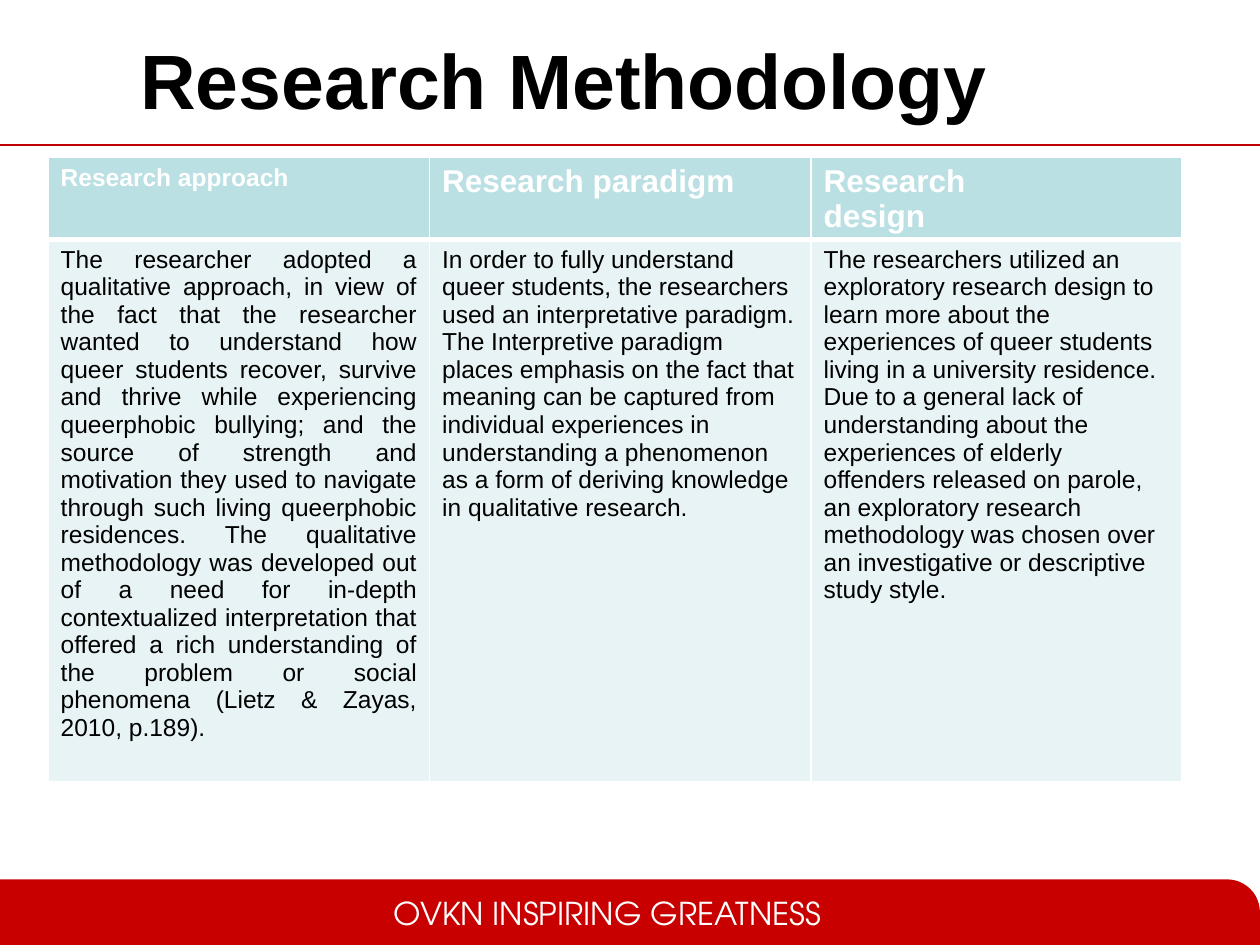
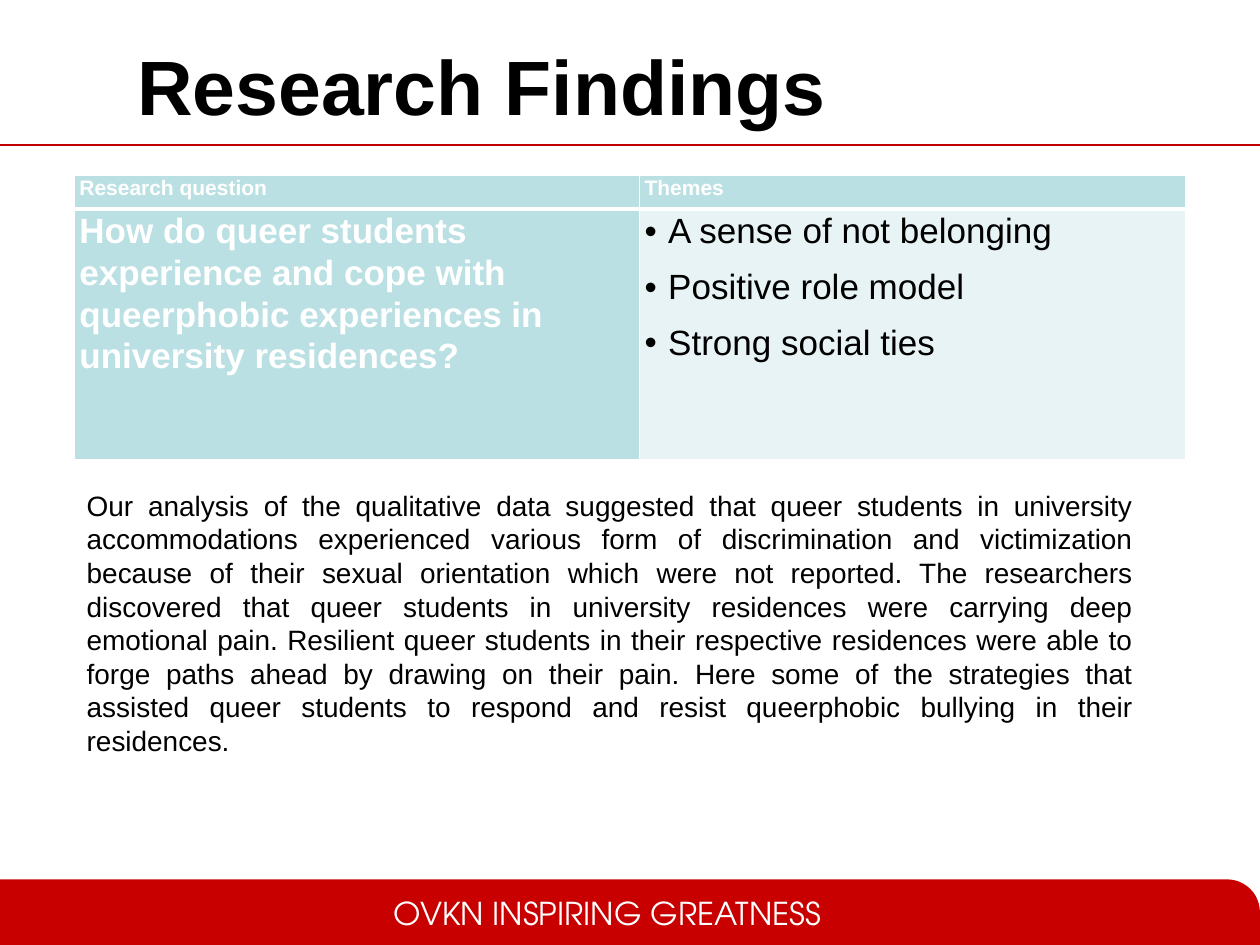
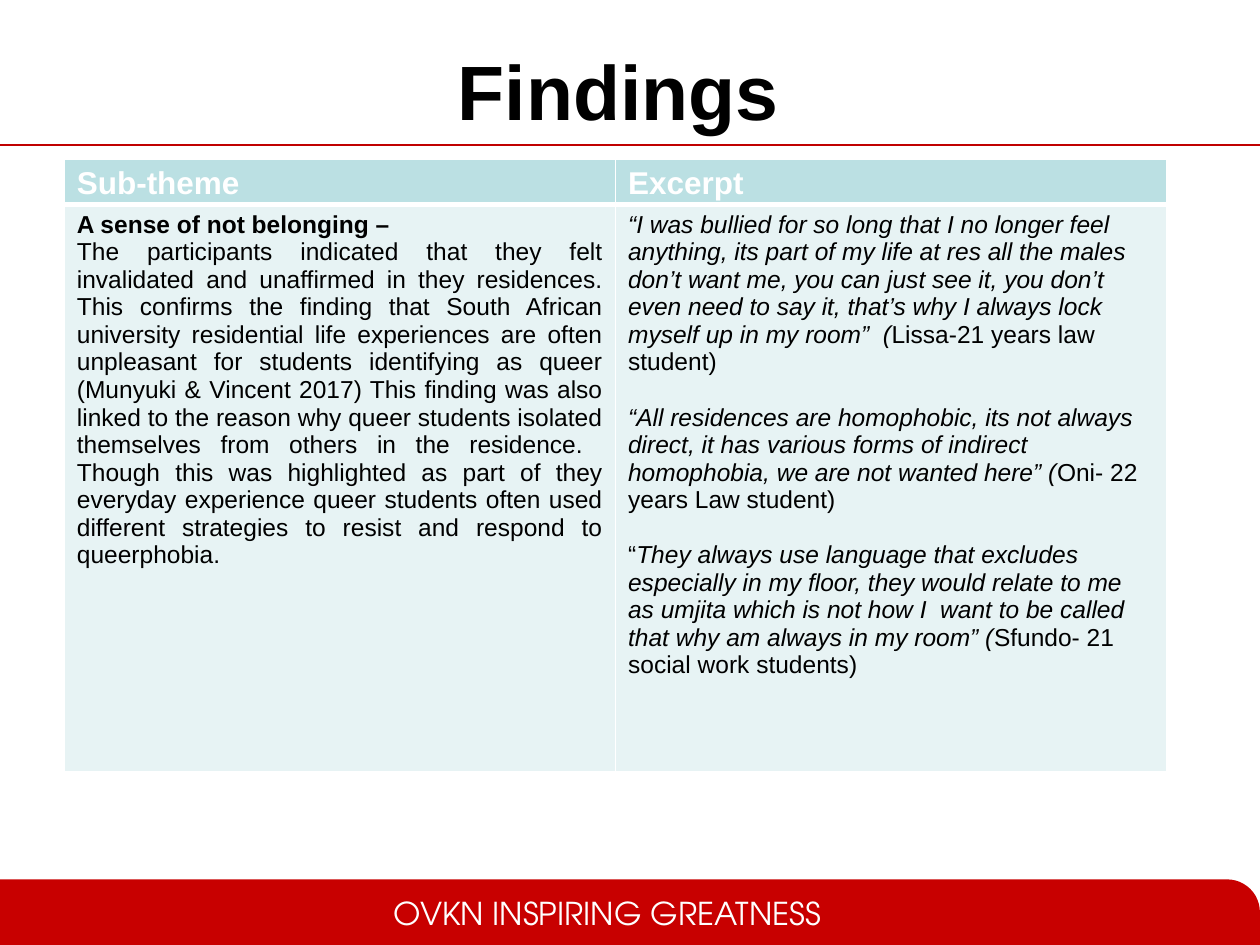
from lxml import etree
from pptx import Presentation
from pptx.dml.color import RGBColor
from pptx.enum import shapes, text
from pptx.oxml.ns import qn
from pptx.util import Pt

FONT, FOOT_FONT = "Arial", "TeX Gyre Adventor"
RULE, BAND = "C00000", "C80000"
HEAD, BODY = "BBE0E3", "E7F3F4"
WHITE, BLACK = "FFFFFF", "000000"
WIDTH, HEIGHT = 720, 540
LEFT, MID, JUST = text.PP_ALIGN.LEFT, text.PP_ALIGN.CENTER, text.PP_ALIGN.JUSTIFY


def rgb(code):
    return RGBColor.from_string(code)


def style(run, size, color=BLACK, bold=False, italic=False, face=FONT):
    font = run.font
    font.size, font.name = Pt(size), face
    font.bold, font.italic = bold, italic
    font.color.rgb = rgb(color)


def write(frame, lines, size, align=LEFT, **look):
    """Fill a text frame with one paragraph per line and return them."""
    frame.text = "\n".join(lines)
    for para in frame.paragraphs:
        para.alignment = align
        for run in para.runs:
            style(run, size, **look)
    return frame.paragraphs


def add_text(slide, box, words, size, align=LEFT, **look):
    frame = slide.shapes.add_textbox(*map(Pt, box)).text_frame
    frame.word_wrap = True
    write(frame, [words], size, align, **look)
    return frame


def add_rule(slide):
    top = Pt(82.75)
    line = slide.shapes.add_connector(
        shapes.MSO_CONNECTOR.STRAIGHT, 0, top, Pt(WIDTH), top)
    line.line.width = Pt(1)
    line.line.color.rgb = rgb(RULE)
    etree.SubElement(line._element.spPr, qn("a:effectLst"))


def add_band(slide):
    top = 502.5
    band = slide.shapes.add_shape(
        shapes.MSO_SHAPE.ROUND_1_RECTANGLE, 0, Pt(top), Pt(WIDTH), Pt(HEIGHT - top))
    band.adjustments[0] = 0.5
    band.shadow.inherit = False
    band.fill.solid()
    band.fill.fore_color.rgb = rgb(BAND)
    band.line.fill.background()
    add_text(slide, (218, 507.5, 300, 29), "OVKN INSPIRING GREATNESS", 18,
             color=WHITE, face=FOOT_FONT)


def add_page(deck, title, left, top):
    """Add a slide with the shared rule, band and title style."""
    slide = deck.slides.add_slide(deck.slide_layouts[6])
    add_rule(slide)
    add_band(slide)
    frame = add_text(slide, (left, top, 648, 90), title, 44, MID, bold=True)
    frame.vertical_anchor = text.MSO_ANCHOR.MIDDLE
    return slide


def edge(cell, side, width):
    line = etree.SubElement(cell._tc.get_or_add_tcPr(), qn("a:ln" + side),
                            w=str(Pt(width)))
    fill = etree.SubElement(line, qn("a:solidFill"))
    etree.SubElement(fill, qn("a:srgbClr"), val=WHITE)


def add_grid(slide, left, top, cols, rows):
    """Add a table with a dark header row over a pale body row."""
    table = slide.shapes.add_table(
        len(rows), len(cols), Pt(left), Pt(top), Pt(sum(cols)), Pt(sum(rows))).table
    table.first_row = table.horz_banding = False
    for col, width in zip(table.columns, cols):
        col.width = Pt(width)
    for r, height in enumerate(rows):
        table.rows[r].height = Pt(height)
        for cell in table.rows[r].cells:
            for side, width in zip("LRTB", (1, 1, 3 if r else 1, 1 if r else 3)):
                edge(cell, side, width)
            paint(cell, BODY if r else HEAD)
    return table


def paint(cell, color):
    cell.fill.solid()
    cell.fill.fore_color.rgb = rgb(color)


def add_heads(table, heads, sizes):
    for cell, words, size in zip(table.rows[0].cells, heads, sizes):
        cell.margin_bottom = 0
        write(cell.text_frame, words.split("\n"), size, color=WHITE, bold=True)


def bullet(para, indent):
    props = para._p.get_or_add_pPr()
    props.set("marL", str(Pt(indent)))
    props.set("indent", str(-Pt(indent)))
    etree.SubElement(props, qn("a:buFont"), typeface=FONT)
    etree.SubElement(props, qn("a:buChar"), char="•")


def add_quote(para, parts, size):
    """Write (words, italic) parts as runs of one paragraph."""
    for words, italic in parts:
        run = para.add_run()
        run.text = words
        style(run, size, italic=italic)


def draw_method(deck):
    slide = add_page(deck, "Research Methodology", -1.5, 0)
    table = add_grid(slide, 27.5, 90, (218, 218, 212), (47, 303))
    add_heads(table, ("Research approach", "Research paradigm", "Research\ndesign"),
              (14, 18, 18))
    notes = (
        "The researcher adopted a qualitative approach, in view of the fact that the "
        "researcher wanted to understand how queer students recover, survive and thrive "
        "while experiencing queerphobic bullying; and the source of strength and "
        "motivation they used to navigate through such living queerphobic residences. "
        "The qualitative methodology was developed out of a need for in-depth "
        "contextualized interpretation that offered a rich understanding of the problem "
        "or social phenomena (Lietz & Zayas, 2010, p.189).",
        "In order to fully understand queer students, the researchers used an "
        "interpretative paradigm. The Interpretive paradigm places emphasis on the fact "
        "that meaning can be captured from individual experiences in understanding a "
        "phenomenon as a form of deriving knowledge in qualitative research.",
        "The researchers utilized an exploratory research design to learn more about the "
        "experiences of queer students living in a university residence. Due to a general "
        "lack of understanding about the experiences of elderly offenders released on "
        "parole, an exploratory research methodology was chosen over an investigative or "
        "descriptive study style.",
    )
    for cell, note, align in zip(table.rows[1].cells, notes, (JUST, LEFT, LEFT)):
        write(cell.text_frame, [note], 14, align)


def draw_themes(deck):
    slide = add_page(deck, "Research Findings ", -42.5, 3.5)
    table = add_grid(slide, 42.5, 100, (323, 312), (19.5, 143))
    add_heads(table, ("Research question", "Themes"), (12, 12))
    ask, themes = table.rows[1].cells
    paint(ask, HEAD)
    write(ask.text_frame,
          ["How do queer students experience and cope with queerphobic experiences in "
           "university residences?"], 20, color=WHITE, bold=True)
    items = write(themes.text_frame, ["A sense of not belonging", "Positive role model",
                                      "Strong social ties"], 20)
    for cell in table.iter_cells():
        cell.margin_left = cell.margin_right = Pt(2.9)
        cell.margin_top = cell.margin_bottom = 0
        for para in cell.text_frame.paragraphs:
            para.line_spacing = 1.07
            para.space_after = Pt(8)
    for para in items:
        bullet(para, 13.5)
    add_text(slide, (42.5, 275.5, 612, 163),
             "Our analysis of the qualitative data suggested that queer students in "
             "university accommodations experienced various form of discrimination and "
             "victimization because of their sexual orientation which were not reported. "
             "The researchers discovered that queer students in university residences were "
             "carrying deep emotional pain. Resilient queer students in their respective "
             "residences were able to forge paths ahead by drawing on their pain. Here some "
             "of the strategies that assisted queer students to respond and resist "
             "queerphobic bullying in their residences.", 16, JUST)


def draw_quotes(deck):
    slide = add_page(deck, "Findings ", 35.5, 6.5)
    table = add_grid(slide, 36.75, 91, (315, 315), (26, 324))
    add_heads(table, ("Sub-theme", "Excerpt"), (18, 18))
    theme, excerpt = table.rows[1].cells
    lead, rest = write(theme.text_frame, [
        "A sense of not belonging –",
        "The participants indicated that they felt invalidated and unaffirmed in they "
        "residences. This confirms the finding that South African university residential "
        "life experiences are often unpleasant for students identifying as queer (Munyuki "
        "& Vincent 2017) This finding was also linked to the reason why queer students "
        "isolated themselves from others in the residence.  Though this was highlighted as "
        "part of they everyday experience queer students often used different strategies "
        "to resist and respond to queerphobia."], 14)
    lead.runs[0].font.bold = True
    rest.alignment = JUST
    quotes = (
        (("“I was bullied for so long that I no longer feel anything, its part of my life "
          "at res all the males don’t want me, you can just see it, you don’t even need to "
          "say it, that’s why I always lock myself up in my room”  (", True),
         ("Lissa-21 years law student)", False)),
        (("“All residences are homophobic, its not always direct, it has various forms of "
          "indirect homophobia, we are not wanted here” (", True),
         ("Oni- 22 years Law student)", False)),
        (("“", False),
         ("They always use language that excludes especially in my floor, they would relate "
          "to me as umjita which is not how I  want to be called that why am always in my "
          "room” (", True),
         ("Sfundo- 21 social work students)", False)),
    )
    frame = excerpt.text_frame
    for i, parts in enumerate(quotes):
        para = frame.add_paragraph() if i else frame.paragraphs[0]
        para.space_before = Pt(15.75 if i else 0)
        add_quote(para, parts, 14)


def main():
    deck = Presentation()
    deck.slide_width, deck.slide_height = Pt(WIDTH), Pt(HEIGHT)
    draw_method(deck)
    draw_themes(deck)
    draw_quotes(deck)
    deck.save("out.pptx")


if __name__ == "__main__":
    main()
